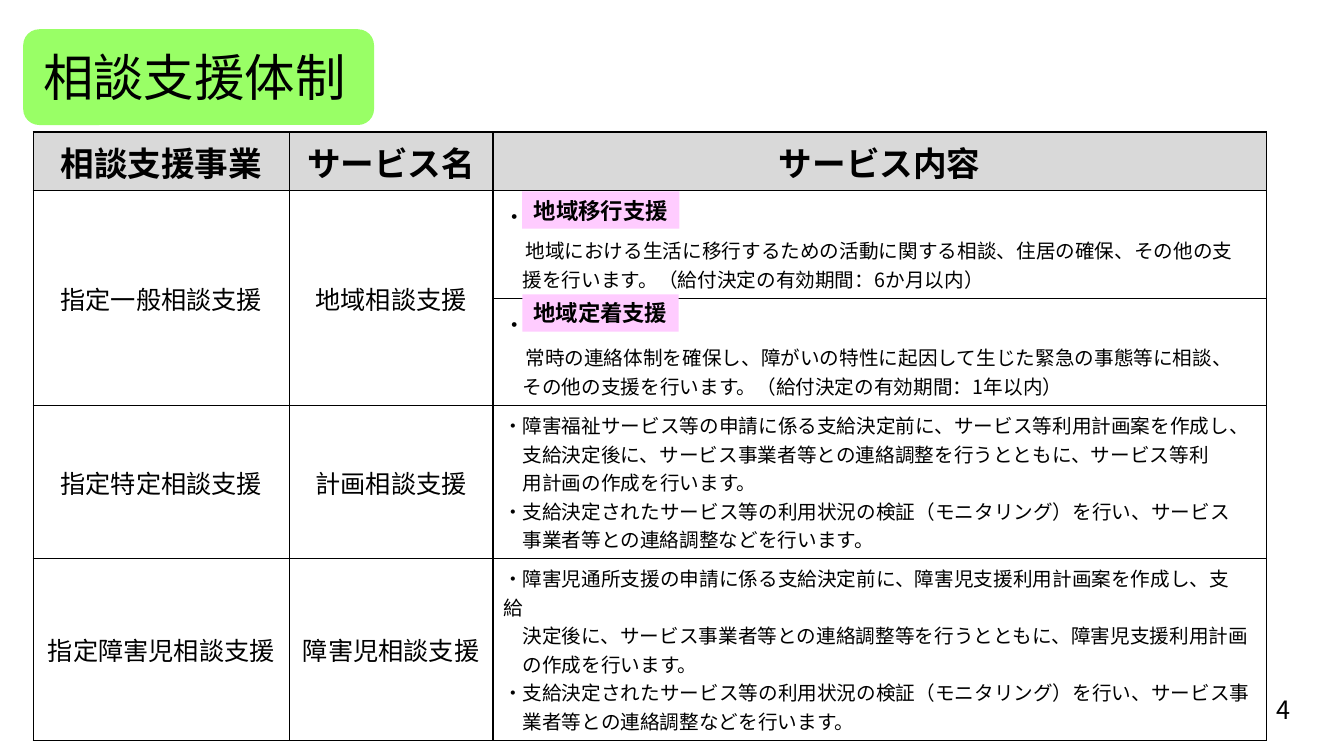
from lxml.etree import SubElement as Sub
from pptx import Presentation
from pptx.dml.color import RGBColor as RGB
from pptx.enum.shapes import MSO_SHAPE as SHAPE
from pptx.enum.text import MSO_ANCHOR as ANCHOR, PP_ALIGN as ALIGN
from pptx.oxml.ns import qn
from pptx.util import Pt

# Content
TITLE = "相談支援体制"
PAGE = "4"
HEAD = ["相談支援事業", "サービス名", "サービス内容"]
ROWS = [
    ("指定一般相談支援", "地域相談支援", [
        "・",
        "　地域における生活に移行するための活動に関する相談、住居の確保、その他の支　",
        "　援を行います。（給付決定の有効期間：6か月以内）"]),
    (None, None, [
        "・",
        "　常時の連絡体制を確保し、障がいの特性に起因して生じた緊急の事態等に相談、　",
        "　その他の支援を行います。（給付決定の有効期間：1年以内）"]),
    ("指定特定相談支援", "計画相談支援", [
        "・障害福祉サービス等の申請に係る支給決定前に、サービス等利用計画案を作成し、",
        "　支給決定後に、サービス事業者等との連絡調整を行うとともに、サービス等利",
        "　用計画の作成を行います。",
        "・支給決定されたサービス等の利用状況の検証（モニタリング）を行い、サービス",
        "　事業者等との連絡調整などを行います。"]),
    ("指定障害児相談支援", "障害児相談支援", [
        "・障害児通所支援の申請に係る支給決定前に、障害児支援利用計画案を作成し、支給　",
        "　決定後に、サービス事業者等との連絡調整等を行うとともに、障害児支援利用計画",
        "　の作成を行います。",
        "・支給決定されたサービス等の利用状況の検証（モニタリング）を行い、サービス事",
        "　業者等との連絡調整などを行います。"]),
]
TAGS = [("地域移行支援", (518, 190, 156, 37)), ("地域定着支援", (518, 292, 155, 37))]

# Places in px, 100 to the inch
PX = 9144
SIZE = (1333, 750)
GRID = (33, 131)
COLS = [254, 202, 767]
HIGH = [54, 103, 103, 136, 139]
BADGE = (23, 29, 348, 95)
NAME = (33, 47, 720, 66)
FOOT = (1256, 684, 77, 40)

THEME = {
    "font": "Noto Sans CJK JP", "ink": "000000", "head": "D9D9D9",
    "badge": "99FF66", "tag": "FFCCFF",
    "title": 36, "top": 24, "label": 18, "mark": 16, "body": 14,
}


def px(box):
    return [n * PX for n in box]


def style(par, size, bold=False, align=ALIGN.LEFT):
    par.alignment = align
    font = par.font
    font.name, font.size, font.bold = THEME["font"], Pt(THEME[size]), bold
    font.color.rgb = RGB.from_string(THEME["ink"])
    props = par._p.pPr.find(qn("a:defRPr"))
    east = Sub(props, qn("a:ea"))
    east.set("typeface", THEME["font"])
    props.find(qn("a:latin")).addnext(east)


def write(frame, lines, size, bold=False, align=ALIGN.LEFT):
    frame.text = "\n".join(lines)
    for par in frame.paragraphs:
        style(par, size, bold, align)


def paint(item, color):
    item.fill.solid()
    item.fill.fore_color.rgb = RGB.from_string(THEME[color])


def block(kind, box, color):
    shape = shapes.add_shape(kind, *px(box))
    shape.shadow.inherit = False
    paint(shape, color)
    shape.line.fill.background()
    return shape


def label(box, text, size):
    frame = shapes.add_textbox(*px(box)).text_frame
    frame.word_wrap = True
    write(frame, [text], size)
    return frame


def edge(cell):
    props = cell._tc.get_or_add_tcPr()
    for spot, side in enumerate(("lnL", "lnR", "lnT", "lnB")):
        line = Sub(props, qn("a:" + side), w=str(Pt(1)))
        fill = Sub(line, qn("a:solidFill"))
        Sub(fill, qn("a:srgbClr"), val=THEME["ink"])
        props.insert(spot, line)


deck = Presentation()
deck.slide_width, deck.slide_height = px(SIZE)
shapes = deck.slides.add_slide(deck.slide_layouts[6]).shapes

# Service table
area = px((*GRID, sum(COLS), sum(HIGH)))
table = shapes.add_table(len(HIGH), len(COLS), *area).table
table.first_row = table.horz_banding = False
for col, wide in zip(table.columns, COLS):
    col.width = wide * PX
for row, high in zip(table.rows, HIGH):
    row.height = high * PX
for cell in table.iter_cells():
    cell.fill.background()
    edge(cell)
for c, text in enumerate(HEAD):
    cell = table.cell(0, c)
    paint(cell, "head")
    write(cell.text_frame, [text], "top", True, ALIGN.CENTER)
for r, (*names, lines) in enumerate(ROWS, 1):
    for c, text in enumerate(names):
        cell = table.cell(r, c)
        if text is None:
            table.cell(r - 1, c).merge(cell)
            continue
        cell.vertical_anchor = ANCHOR.MIDDLE
        write(cell.text_frame, [text], "label", False, ALIGN.CENTER)
    frame = table.cell(r, 2).text_frame
    write(frame, lines, "body")
    # A lone bullet leaves room for its tag
    if lines[0] == "・":
        first, second = frame.paragraphs[:2]
        first.font.size = Pt(THEME["mark"])
        first.line_spacing = Pt(26)
        text = second.text
        second.text = text[0]
        second.runs[0].font.size = Pt(THEME["mark"])
        second.add_run().text = text[1:]

# Title and page number
block(SHAPE.ROUNDED_RECTANGLE, BADGE, "badge")
name = label(NAME, TITLE, "title")
name.vertical_anchor = ANCHOR.MIDDLE
name.paragraphs[0].line_spacing = 0.9
label(FOOT, PAGE, "label")

# Pink tags
for text, box in TAGS:
    frame = block(SHAPE.RECTANGLE, box, "tag").text_frame
    frame.vertical_anchor = ANCHOR.MIDDLE
    frame.word_wrap = True
    write(frame, [text], "mark", True, ALIGN.CENTER)

deck.save("out.pptx")
